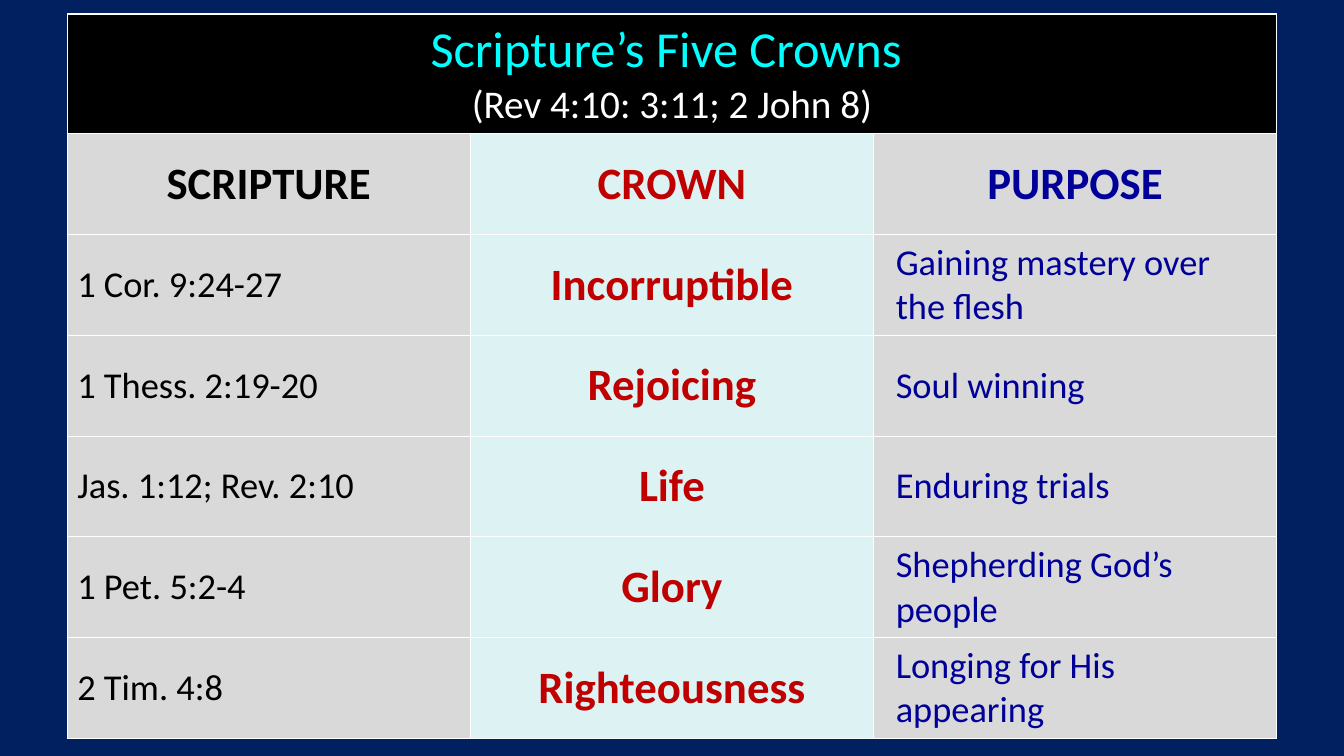
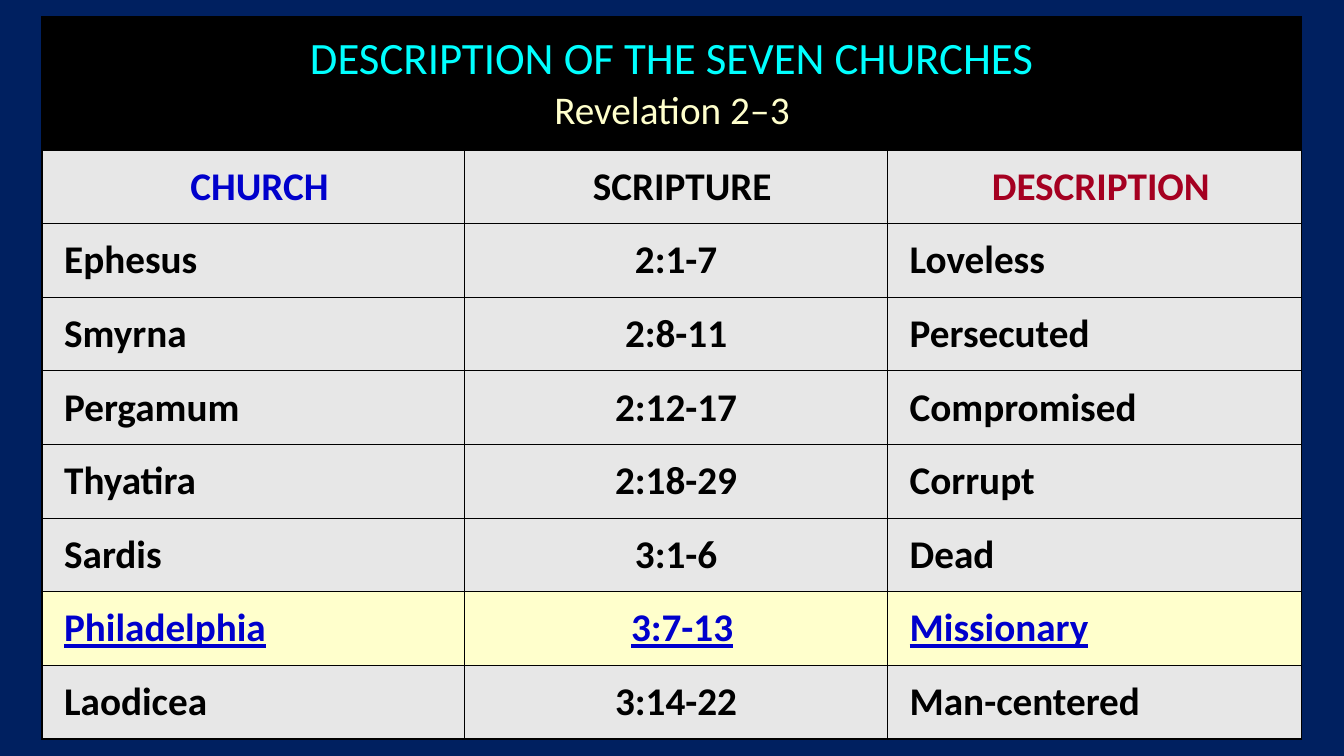
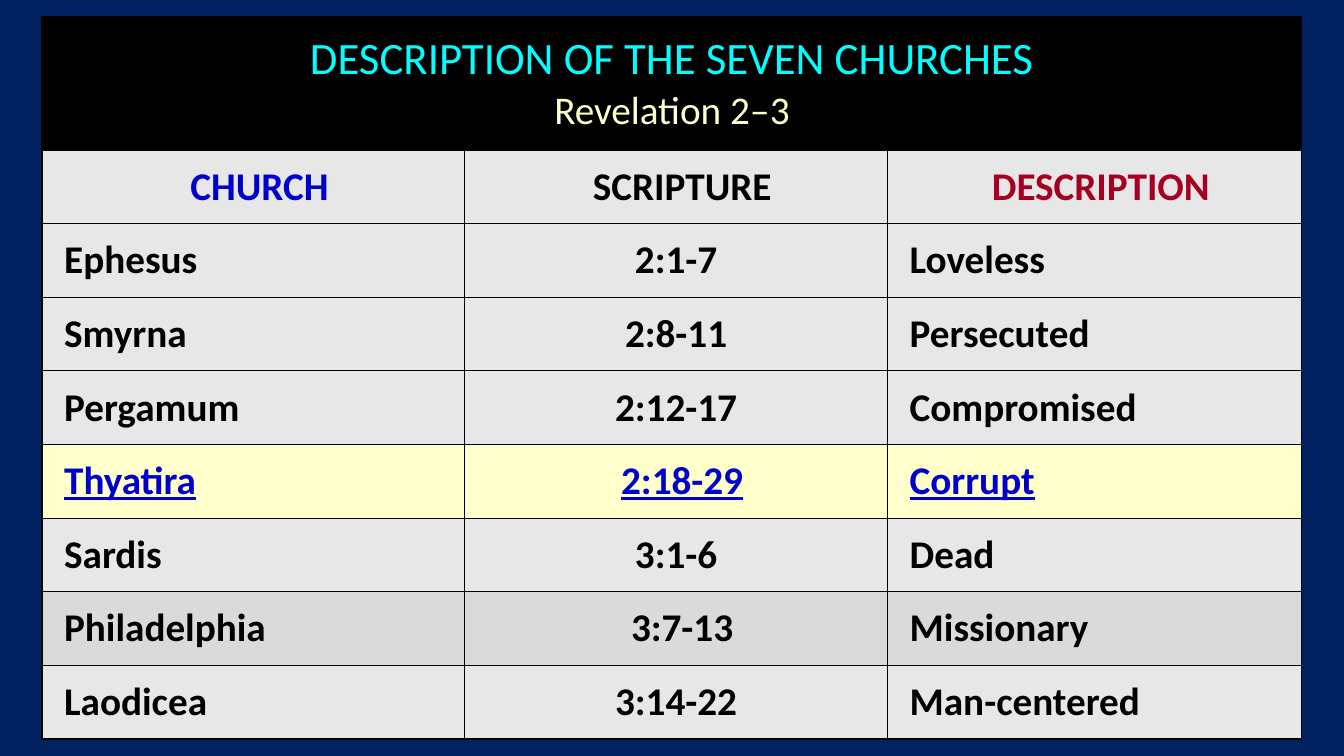
from dataclasses import dataclass, replace
from lxml.etree import SubElement as Sub
from pptx import Presentation
from pptx.dml.color import RGBColor as Rgb
from pptx.enum.text import MSO_ANCHOR as Anchor, PP_ALIGN as Align
from pptx.oxml.ns import qn
from pptx.util import Pt


# Colours and type sizes
@dataclass(frozen=True)
class Theme:
    font: str = "Calibri"
    back: str = "002060"
    black: str = "000000"
    white: str = "FFFFFF"
    aqua: str = "00FFFF"
    cream: str = "FFFFCC"
    gray: str = "D9D9D9"
    shade: str = "DADADA"
    pale: str = "E7E7E7"
    mint: str = "DDF3F3"
    red: str = "C00000"
    wine: str = "A50021"
    navy: str = "000099"
    blue: str = "0000CC"
    huge: int = 36
    big: int = 32
    mid: int = 28
    small: int = 26
    inset: float = 8.64


T = Theme()


# How the text and ground of one cell look
@dataclass(frozen=True)
class Look:
    fill: str
    ink: str = T.black
    size: int = T.mid
    bold: bool = True
    line: bool = False
    align: Align = Align.LEFT
    inset: float = 0


class Deck:
    def __init__(self):
        self.prs = Presentation()
        self.prs.slide_width, self.prs.slide_height = Pt(960), Pt(540)
        ground = self.prs.slide_master.background.fill
        ground.solid()
        ground.fore_color.rgb = Rgb.from_string(T.back)

    def page(self):
        self.slide = self.prs.slides.add_slide(self.prs.slide_layouts[6])

    def grid(self, left, top, widths, heights, edge):
        """Add an empty table whose first row is one merged banner."""
        frame = self.slide.shapes.add_table(
            len(heights), len(widths), Pt(left), Pt(top),
            Pt(sum(widths)), Pt(sum(heights)))
        table = frame.table
        table.first_row = table.horz_banding = False
        for col, width in zip(table.columns, widths):
            col.width = Pt(width)
        for row, height in zip(table.rows, heights):
            row.height = Pt(height)
        for cell in table.iter_cells():
            self.edge(cell, edge)
        table.cell(0, 0).merge(table.cell(0, len(widths) - 1))
        return table

    def edge(self, cell, ink):
        props = cell._tc.get_or_add_tcPr()
        for side in ("a:lnL", "a:lnR", "a:lnT", "a:lnB"):
            line = Sub(props, qn(side), w=str(Pt(1)))
            Sub(Sub(line, qn("a:solidFill")), qn("a:srgbClr"), val=ink)

    def ground(self, cell, ink):
        cell.vertical_anchor = Anchor.MIDDLE
        cell.fill.solid()
        cell.fill.fore_color.rgb = Rgb.from_string(ink)

    def style(self, font, ink, size, bold=False, line=False):
        font.name, font.size, font.bold = T.font, Pt(size), bold
        font.underline = line
        font.color.rgb = Rgb.from_string(ink)

    def banner(self, table, *lines):
        """Fill the merged row with lines of (text, ink, size)."""
        cell = table.cell(0, 0)
        self.ground(cell, T.black)
        para = cell.text_frame.paragraphs[0]
        para.alignment = Align.CENTER
        for num, (text, ink, size) in enumerate(lines):
            if num:
                para.add_line_break()
            run = para.add_run()
            run.text = text
            self.style(run.font, ink, size)

    def label(self, cell, text, look):
        self.ground(cell, look.fill)
        para = cell.text_frame.paragraphs[0]
        para.text, para.alignment = text, look.align
        if look.inset:
            para._p.get_or_add_pPr().set("marL", str(Pt(look.inset)))
        self.style(para.font, look.ink, look.size, look.bold, look.line)

    def row(self, table, num, texts, looks):
        for col, (text, look) in enumerate(zip(texts, looks)):
            self.label(table.cell(num, col), text, look)


# Table of crowns
CROWNS = [
    ("1 Cor. 9:24-27", "Incorruptible", "Gaining mastery over the flesh"),
    ("1 Thess. 2:19-20", "Rejoicing", "Soul winning"),
    ("Jas. 1:12; Rev. 2:10", "Life", "Enduring trials"),
    ("1 Pet. 5:2-4", "Glory", "Shepherding God’s people"),
    ("2 Tim. 4:8", "Righteousness", "Longing for His appearing"),
]


def crowns(deck):
    deck.page()
    table = deck.grid(48, 10, [288] * 3, [85.2] + [72] * 6, T.white)
    deck.banner(table, ("Scripture’s Five Crowns ", T.aqua, T.huge),
                ("(Rev 4:10: 3:11; 2 John 8)", T.white, T.mid))
    plain = Look(T.gray, size=T.small, bold=False)
    crown = Look(T.mint, T.red, T.big, align=Align.CENTER)
    looks = [plain, crown, replace(plain, ink=T.navy, inset=T.inset)]
    heads = [replace(crown, fill=look.fill, ink=look.ink) for look in looks]
    deck.row(table, 1, ("SCRIPTURE", "CROWN", "PURPOSE"), heads)
    for num, texts in enumerate(CROWNS, 2):
        deck.row(table, num, texts, looks)


# Table of churches, with one row marked
CHURCHES = [
    ("Ephesus", "2:1-7", "Loveless"),
    ("Smyrna", "2:8-11", "Persecuted"),
    ("Pergamum", "2:12-17", "Compromised"),
    ("Thyatira", "2:18-29", "Corrupt"),
    ("Sardis", "3:1-6", "Dead"),
    ("Philadelphia", "3:7-13", "Missionary"),
    ("Laodicea", "3:14-22", "Man-centered"),
]


def churches(deck, marked, shaded=None):
    deck.page()
    table = deck.grid(30, 12, [302, 302, 296], [95.2] + [52.6] * 8, T.black)
    deck.banner(table, ("DESCRIPTION OF THE SEVEN CHURCHES", T.aqua, T.big),
                ("Revelation 2‒3", T.cream, T.mid))
    side = Look(T.pale, inset=T.inset)
    head = replace(side, align=Align.CENTER)
    deck.row(table, 1, ("CHURCH", "SCRIPTURE", "DESCRIPTION"),
             [replace(head, ink=ink) for ink in (T.blue, T.black, T.wine)])
    for num, texts in enumerate(CHURCHES, 2):
        looks = [side, replace(head, inset=0), side]
        if texts[0] in (marked, shaded):
            looks = [side, head, side]
            change = {"fill": T.shade}
            if texts[0] == marked:
                change = {"fill": T.cream, "ink": T.blue, "line": True}
            looks = [replace(look, **change) for look in looks]
        deck.row(table, num, texts, looks)


def main():
    deck = Deck()
    crowns(deck)
    churches(deck, "Philadelphia")
    churches(deck, "Thyatira", "Philadelphia")
    deck.prs.save("out.pptx")


if __name__ == "__main__":
    main()
